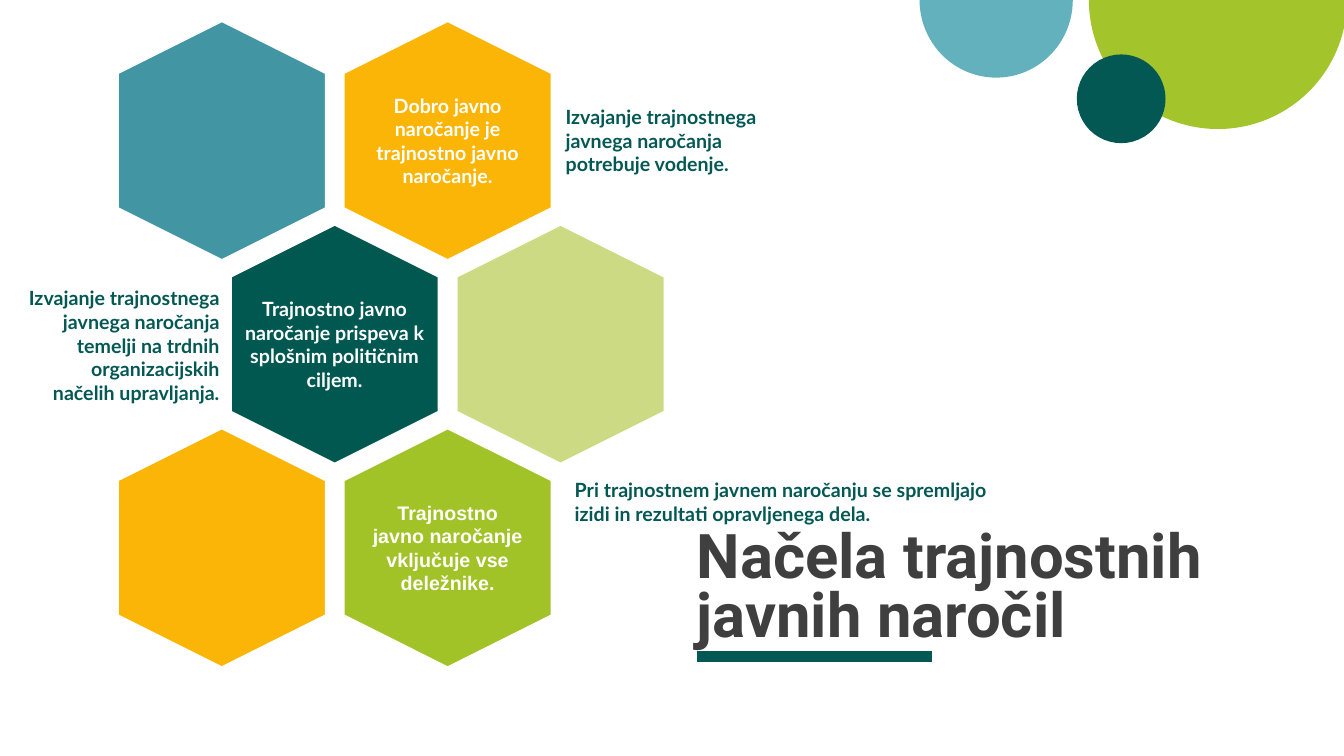
from dataclasses import dataclass

import pptx
import pptx.dml.color
import pptx.enum.shapes
import pptx.enum.text
import pptx.oxml.ns
import pptx.slide
import pptx.text.text
import pptx.util
from lxml import etree

Inches = pptx.util.Inches
Align = pptx.enum.text.PP_ALIGN
Anchor = pptx.enum.text.MSO_ANCHOR
Preset = pptx.enum.shapes.MSO_SHAPE


@dataclass(frozen=True)
class Theme:
    teal: str = "4295A2"
    sky: str = "64B1BE"
    pine: str = "035854"
    forest: str = "005851"
    amber: str = "FAB506"
    pale: str = "CBDA83"
    lime: str = "A2C328"
    leaf: str = "A3C42A"
    white: str = "FFFFFF"
    ink: str = "3F3F3F"
    heading: str = "Roboto"
    body: str = "Lato"
    plain: str = "Arial"
    title_size: int = 44
    body_size: int = 14
    outline: int = 2
    rule: int = 8


@dataclass(frozen=True)
class Principle:
    """A honeycomb cell; column counts in pitches, so halves are shifted cells."""
    row: int
    column: float
    color: str
    text: str = ""
    font: str = Theme.body
    text_width: float = 2.07


@dataclass(frozen=True)
class Note:
    left: float
    top: float
    width: float
    text: str
    align: Align


@dataclass(frozen=True)
class Bubble:
    left: float
    top: float
    width: float
    height: float
    color: str
    preset: Preset


THEME = Theme()
HEX_LENGTH, HEX_WIDTH = 2.38, 2.07
GRID_LEFT, GRID_TOP = 1.01, 0.36
COLUMN_PITCH, ROW_PITCH = 2.24, 2.02
LABEL_HEIGHT, NOTE_HEIGHT = 1.64, 1.43
TEXT_INSET = 0.07

BUBBLES = [
    Bubble(10.8, -1.28, 2.56, 2.56, THEME.leaf, Preset.PIE),
    Bubble(9.12, -0.77, 1.52, 1.54, THEME.sky, Preset.PIE),
    Bubble(10.68, 0.54, 0.88, 0.88, THEME.pine, Preset.OVAL),
]
PRINCIPLES = [
    Principle(0, 1, THEME.amber, "Dobro javno naročanje je trajnostno javno naročanje."),
    Principle(0, 0, THEME.teal),
    Principle(1, 0.5, THEME.forest,
              "Trajnostno javno naročanje prispeva k splošnim političnim ciljem."),
    Principle(1, 1.5, THEME.pale),
    Principle(2, 1, THEME.lime, "Trajnostno javno naročanje vključuje vse deležnike.",
              THEME.plain, 1.68),
    Principle(2, 0, THEME.amber),
]
NOTES = [
    Note(5.54, 0.68, 2.07,
         "Izvajanje trajnostnega javnega naročanja potrebuje vodenje.", Align.LEFT),
    Note(0.18, 2.71, 2.07, "Izvajanje trajnostnega javnega naročanja temelji na trdnih "
         "organizacijskih načelih upravljanja.", Align.RIGHT),
    Note(5.63, 4.26, 4.35, "Pri trajnostnem javnem naročanju se spremljajo izidi in "
         "rezultati opravljenega dela.", Align.LEFT),
]


def rgb(color: str) -> pptx.dml.color.RGBColor:
    return pptx.dml.color.RGBColor.from_string(color)


def fill_text(frame: pptx.text.text.TextFrame, text: str, font: str, size: int, color: str,
              align: Align, anchor: Anchor = Anchor.MIDDLE, inset: float = TEXT_INSET) -> None:
    margin = Inches(inset)
    frame_format = {
        "text": text, "word_wrap": True, "vertical_anchor": anchor,
        "auto_size": pptx.enum.text.MSO_AUTO_SIZE.NONE,
        "margin_left": margin, "margin_top": margin,
        "margin_right": margin, "margin_bottom": margin,
    }
    for key, value in frame_format.items():
        setattr(frame, key, value)
    paragraph = frame.paragraphs[0]
    paragraph.alignment = align
    run_font = paragraph.runs[0].font
    for key, value in {"name": font, "size": pptx.util.Pt(size), "bold": True}.items():
        setattr(run_font, key, value)
    run_font.color.rgb = rgb(color)


def add_bubble(slide: pptx.slide.Slide, bubble: Bubble) -> None:
    shape = slide.shapes.add_shape(bubble.preset, Inches(bubble.left), Inches(bubble.top),
                                   Inches(bubble.width), Inches(bubble.height))
    if bubble.preset == Preset.PIE:
        shape.adjustments[0], shape.adjustments[1] = 0, 108  # lower half: 0 to 180 degrees
    shape.shadow.inherit = False
    shape.fill.solid()
    shape.fill.fore_color.rgb = rgb(bubble.color)
    shape.line.fill.background()


def add_principle(slide: pptx.slide.Slide, principle: Principle) -> None:
    left = GRID_LEFT + principle.column * COLUMN_PITCH
    top = GRID_TOP + principle.row * ROW_PITCH
    hexagon = slide.shapes.add_shape(Preset.HEXAGON, Inches(left), Inches(top),
                                     Inches(HEX_LENGTH), Inches(HEX_WIDTH))
    hexagon.rotation = 90
    hexagon.shadow.inherit = False
    hexagon.fill.solid()
    hexagon.fill.fore_color.rgb = rgb(principle.color)
    hexagon.line.color.rgb = rgb(THEME.white)
    hexagon.line.width = pptx.util.Pt(THEME.outline)
    if principle.text:
        label = slide.shapes.add_textbox(
            Inches(left + (HEX_LENGTH - principle.text_width) / 2),
            Inches(top + (HEX_WIDTH - LABEL_HEIGHT) / 2),
            Inches(principle.text_width), Inches(LABEL_HEIGHT))
        fill_text(label.text_frame, principle.text, principle.font, THEME.body_size,
                  THEME.white, Align.CENTER)


def add_note(slide: pptx.slide.Slide, note: Note) -> None:
    box = slide.shapes.add_textbox(Inches(note.left), Inches(note.top),
                                   Inches(note.width), Inches(NOTE_HEIGHT))
    fill_text(box.text_frame, note.text, THEME.body, THEME.body_size, THEME.pine, note.align)


def add_title(slide: pptx.slide.Slide) -> None:
    """Place the title and the rule under it."""
    title = slide.shapes.title
    bounds = {"left": 6.91, "top": 4.93, "width": 5.77, "height": 1.51}
    for key, value in bounds.items():
        setattr(title, key, Inches(value))
    fill_text(title.text_frame, "Načela trajnostnih javnih naročil", THEME.heading,
              THEME.title_size, THEME.ink, Align.LEFT, Anchor.BOTTOM, 0)
    title.text_frame.paragraphs[0].line_spacing = 0.8
    rule = slide.shapes.add_connector(pptx.enum.shapes.MSO_CONNECTOR.STRAIGHT,
                                      Inches(6.91), Inches(6.51), Inches(9.24), Inches(6.51))
    rule.line.color.rgb = rgb(THEME.pine)
    rule.line.width = pptx.util.Pt(THEME.rule)
    etree.SubElement(rule.element.spPr, pptx.oxml.ns.qn("a:effectLst"))


def main() -> None:
    deck = pptx.Presentation()
    deck.slide_width, deck.slide_height = Inches(13.33), Inches(7.5)
    slide = deck.slides.add_slide(deck.slide_layouts[5])
    add_title(slide)
    for bubble in BUBBLES:
        add_bubble(slide, bubble)
    for principle in PRINCIPLES:
        add_principle(slide, principle)
    for note in NOTES:
        add_note(slide, note)
    deck.save("out.pptx")


if __name__ == "__main__":
    main()
